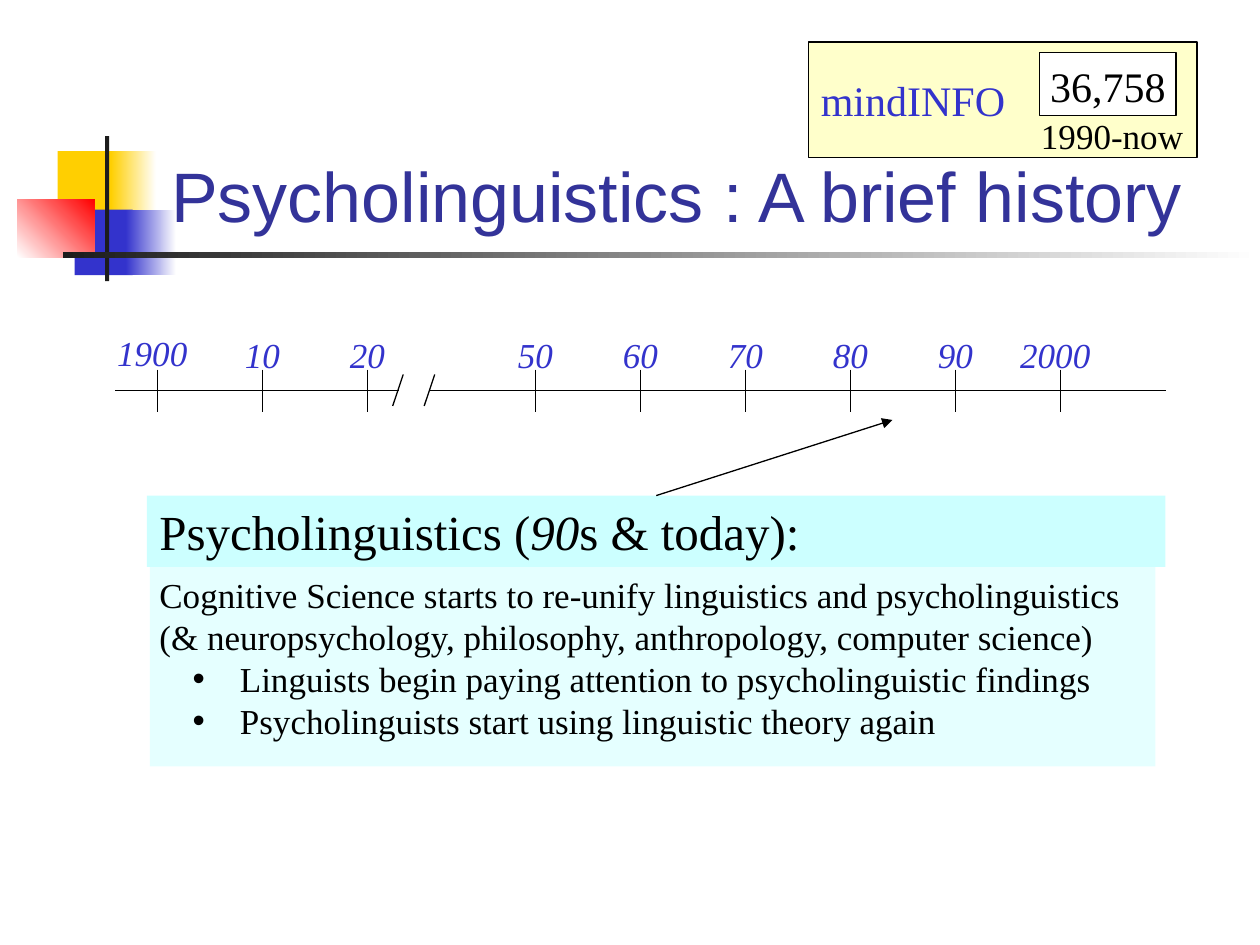
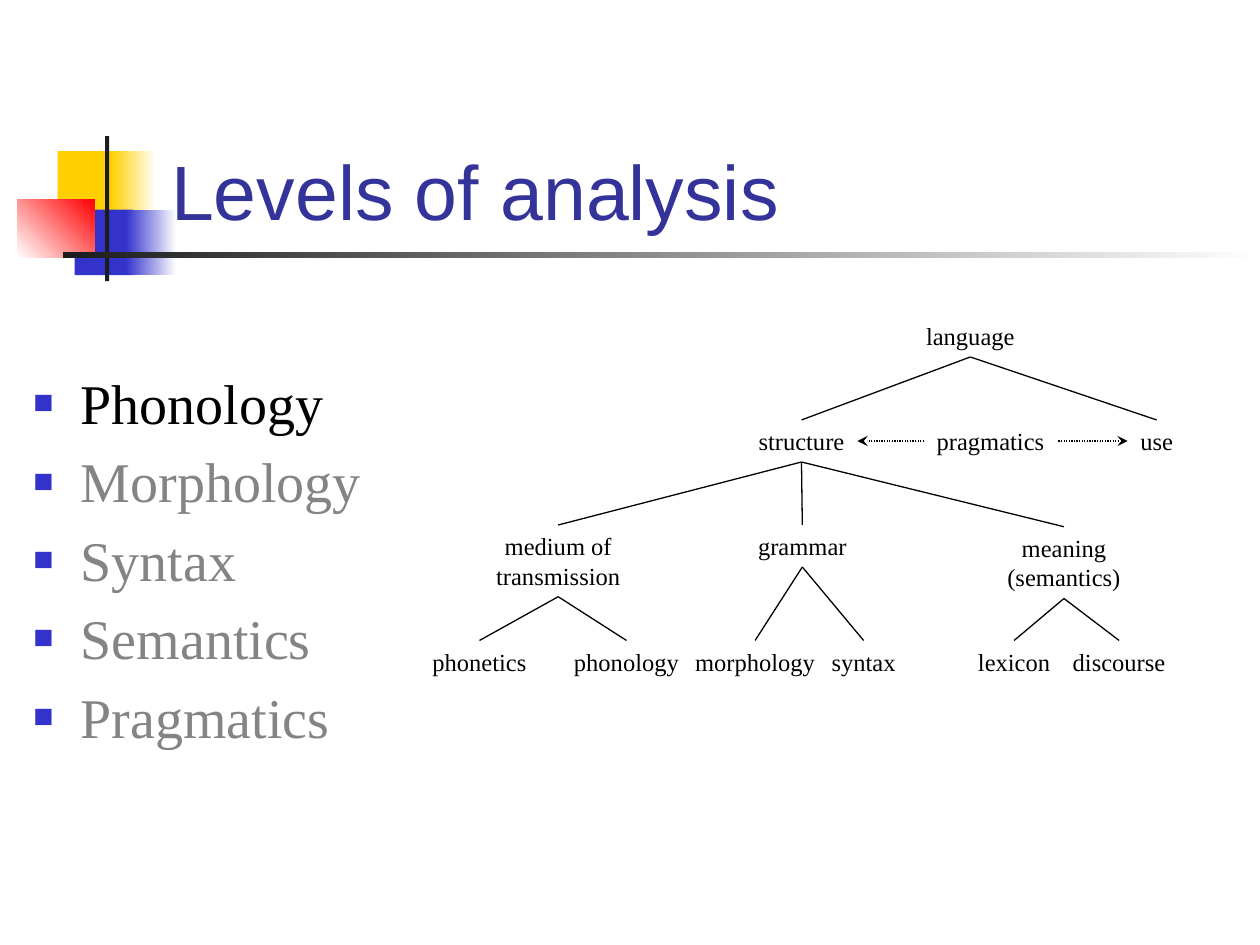
from lxml.etree import SubElement as Sub
from pptx import Presentation
from pptx.dml.color import RGBColor as RGB
from pptx.enum.dml import MSO_LINE as Dash
from pptx.enum.shapes import MSO_CONNECTOR as Conn, MSO_SHAPE as Form
from pptx.enum.text import MSO_ANCHOR as Anchor, PP_ALIGN as Align
from pptx.oxml.ns import qn
from pptx.util import Pt

BLACK = RGB(0x00, 0x00, 0x00)
WHITE = RGB(0xFF, 0xFF, 0xFF)
INK = RGB(0x1C, 0x1C, 0x1C)
GOLD = RGB(0xFF, 0xCF, 0x01)
BLUE = RGB(0x33, 0x33, 0xCC)
RED = RGB(0xFF, 0x00, 0x00)
NAVY = RGB(0x33, 0x33, 0x99)
GREY = RGB(0x84, 0x84, 0x84)
CYAN = RGB(0xCC, 0xFF, 0xFF)
CREAM = RGB(0xFF, 0xFF, 0x99)
SANS, SERIF = "Arial", "Times New Roman"

# Box in points, start colour, end colour of a fade, angle
DECOR = [
    ((33, 86.4, 34.6, 37.4), GOLD, None, 0),
    ((63.4, 86.4, 25.9, 37.4), GOLD, WHITE, 0),
    ((42.7, 119.8, 33.1, 37.4), BLUE, None, 0),
    ((72, 119.8, 28.8, 37.4), BLUE, WHITE, 0),
    ((10, 113.8, 44, 33.2), WHITE, RED, 45),
    ((60, 77.8, 2.4, 82.8), INK, None, 0),
    ((36, 144, 684, 3.6), INK, WHITE, 0),
]

# Name: (lines, centre, top, children)
TREE = {
    "language": (["language"], 554.5, 180, ["structure", "use"]),
    "structure": (["structure"], 458, 240, ["medium", "grammar", "meaning"]),
    "pragmatics": (["pragmatics"], 566, 240, []),
    "use": (["use"], 661, 240, []),
    "medium": (["medium of", "transmission"], 319, 300,
               ["phonetics", "phonology"]),
    "grammar": (["grammar"], 458.5, 300, ["morphology", "syntax"]),
    "meaning": (["meaning", "(semantics)"], 608, 301,
                ["lexicon", "discourse"]),
    "phonetics": (["phonetics"], 274, 366, []),
    "phonology": (["phonology"], 358, 366, []),
    "morphology": (["morphology"], 431.5, 366, []),
    "syntax": (["syntax"], 493.5, 366, []),
    "lexicon": (["lexicon"], 579.5, 366, []),
    "discourse": (["discourse"], 639.5, 366, []),
}


class Deck:
    def __init__(self):
        self.prs = Presentation()
        self.prs.slide_width, self.prs.slide_height = Pt(720), Pt(540)
        self.shapes = None

    def page(self, title, size):
        """Start a slide with the shared decoration and a title."""
        layout = self.prs.slide_layouts[6]
        self.shapes = self.prs.slides.add_slide(layout).shapes
        for box, start, end, angle in DECOR:
            self.rect(box, start, end, angle)
        self.text((90.7, 48.5, 613.4, 90), [title], size, NAVY, SANS,
                  anchor=Anchor.BOTTOM)

    def rect(self, box, color, end=None, angle=0, alpha=None, edge=False):
        shape = self.shapes.add_shape(Form.RECTANGLE, *map(Pt, box))
        shape.shadow.inherit = False
        if end is None:
            shape.fill.solid()
            shape.fill.fore_color.rgb = color
        else:
            shape.fill.gradient()
            shape.fill.gradient_angle = angle
            for stop, tint in zip(shape.fill.gradient_stops, (color, end)):
                stop.color.rgb = tint
        if alpha is not None:
            tint = next(shape._element.spPr.iter(qn("a:srgbClr")))
            Sub(tint, qn("a:alpha"), val=str(alpha * 1000))
        if edge:
            shape.line.color.rgb = BLACK
            shape.line.width = Pt(0.75)
        else:
            shape.line.fill.background()

    def text(self, box, lines, size, color=BLACK, face=SERIF, italic=False,
             align=Align.LEFT, anchor=Anchor.TOP):
        """Add text; a line is a string or a list of (words, italic) runs."""
        frame = self.shapes.add_textbox(*map(Pt, box)).text_frame
        frame.word_wrap = True
        frame.vertical_anchor = anchor
        for i, line in enumerate(lines):
            para = frame.add_paragraph() if i else frame.paragraphs[0]
            para.alignment = align
            font = para.font
            font.name, font.size, font.italic = face, Pt(size), italic
            font.color.rgb = color
            runs = [(line, None)] if isinstance(line, str) else line
            for words, slant in runs:
                run = para.add_run()
                run.text = words
                if slant is not None:
                    run.font.italic = slant
        return frame.paragraphs

    def label(self, mid, top, lines, size, color=BLACK, italic=False):
        """Add text centred on the given x."""
        self.text((mid - 60, top, 120, 24), lines, size, color,
                  italic=italic, align=Align.CENTER)

    def bullet(self, para, mark, left, hang, color=None, scale=100):
        props = para._p.get_or_add_pPr()
        props.set("marL", str(Pt(left)))
        props.set("indent", str(-Pt(hang)))
        marks = []
        if color is not None:
            tint = Sub(props, qn("a:buClr"))
            Sub(tint, qn("a:srgbClr"), val=str(color))
            marks.append(tint)
        marks += [Sub(props, qn("a:buSzPct"), val=str(scale * 1000)),
                  Sub(props, qn("a:buFont"), typeface=SANS),
                  Sub(props, qn("a:buChar"), char=mark)]
        font = props.find(qn("a:defRPr"))
        for item in marks:
            font.addprevious(item)

    def line(self, x1, y1, x2, y2, head=None, dash=None):
        link = self.shapes.add_connector(
            Conn.STRAIGHT, Pt(x1), Pt(y1), Pt(x2), Pt(y2))
        link.line.color.rgb = BLACK
        link.line.width = Pt(0.75)
        if dash is not None:
            link.line.dash_style = dash
        props = link._element.spPr
        if head:
            Sub(props.find(qn("a:ln")), qn("a:tailEnd"), type=head)
        Sub(props, qn("a:effectLst"))


def history(deck):
    deck.page("Psycholinguistics : A brief history", 40)

    axis = 223.2
    deck.line(66, axis, 228, axis)
    deck.line(246, axis, 666, axis)
    for x in (230.4, 248.4):
        deck.line(x, 214, x - 6, 232)
    early, late = ["1900", "10", "20"], ["50", "60", "70", "80", "90", "2000"]
    for start, years in ((90, early), (306, late)):
        for i, year in enumerate(years):
            x = start + 60 * i
            deck.line(x, axis - 12, x, axis + 12)
            shift = 3 if len(year) == 4 else 0
            top = 186 if year == "1900" else 187.2
            deck.label(x - shift, top, [year], 20, BLUE, True)

    head = (84, 283.2, 582, 40.8)
    deck.rect(head, CYAN)
    deck.text(head, [[("Psycholinguistics (", None), ("90", True),
                      ("s & today):", None)]], 28)
    deck.rect((85.7, 324, 574.6, 114), CYAN, alpha=50)
    paras = deck.text((84, 324, 594, 103), [
        "Cognitive Science starts to re-unify linguistics and "
        "psycholinguistics",
        "(& neuropsychology, philosophy, anthropology, computer science)",
        "Linguists begin paying attention to psycholinguistic findings",
        "Psycholinguists start using linguistic theory again"], 20)
    for para in paras[2:]:
        deck.bullet(para, "•", 46, 27)
    deck.line(375, 283.2, 510, 240, head="triangle")

    card = (462, 24, 222, 66)
    deck.rect(card, CREAM, alpha=50, edge=True)
    deck.text(card, ["mindINFO"], 24, BLUE, anchor=Anchor.MIDDLE)
    deck.rect((594, 30, 78, 36), WHITE, edge=True)
    deck.label(633, 31, ["36,758"], 24)
    deck.label(635.5, 62, ["1990-now"], 20)


def levels(deck):
    deck.page("Levels of analysis", 44)

    names = ["Phonology", "Morphology", "Syntax", "Semantics", "Pragmatics"]
    paras = deck.text((12, 207, 240, 276), names, 32, GREY)
    paras[0].font.color.rgb = BLACK
    for i, para in enumerate(paras):
        if i:
            para.space_before = Pt(6.4)
        deck.bullet(para, "■", 27, 27, BLUE, 60)

    for lines, mid, top, kids in TREE.values():
        deck.label(mid, top, lines, 14)
        foot = top + 7 + 17 * len(lines)
        for kid in kids:
            deck.line(mid, foot, TREE[kid][1], TREE[kid][2])
    for start, end in ((528, 490), (604.8, 644.4)):
        deck.line(start, 252, end, 252, head="stealth", dash=Dash.ROUND_DOT)


def main():
    deck = Deck()
    history(deck)
    levels(deck)
    deck.prs.save("out.pptx")


if __name__ == "__main__":
    main()
